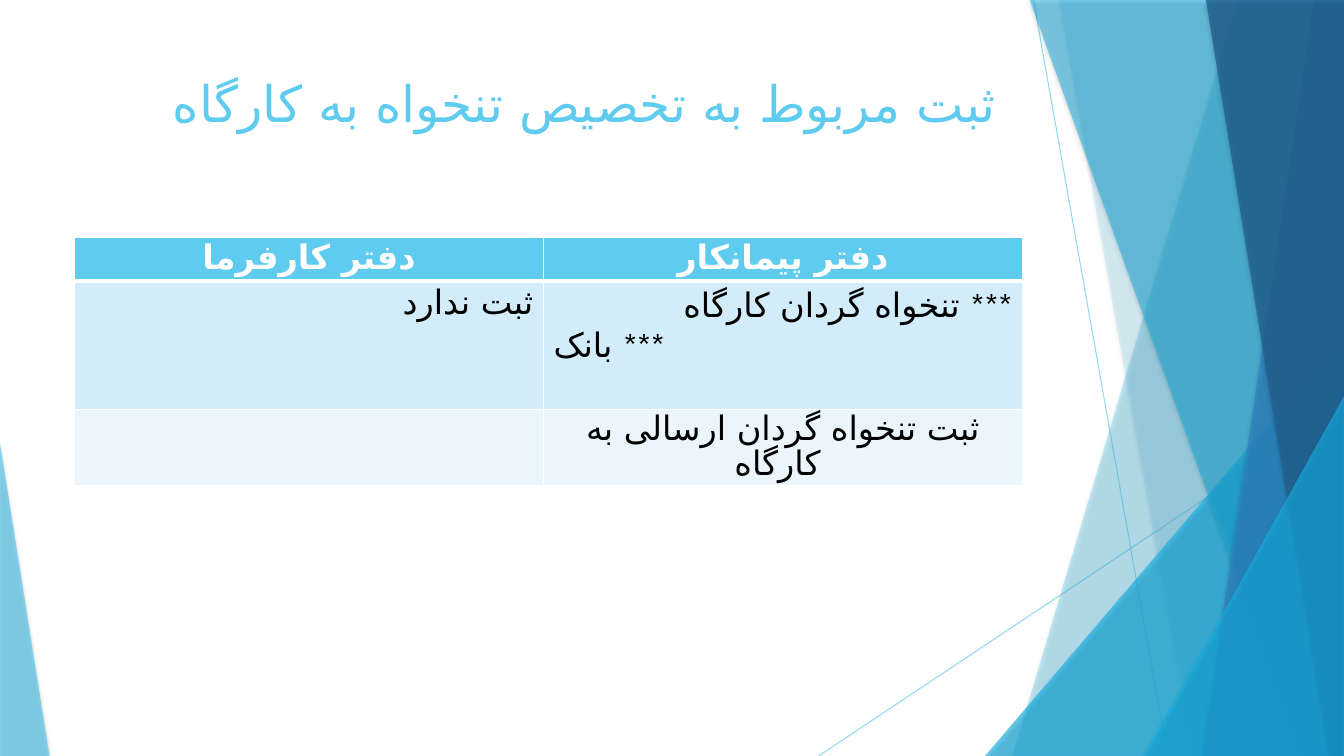
from lxml import etree
from pptx import Presentation
from pptx.dml.color import RGBColor as RGB
from pptx.enum.lang import MSO_LANGUAGE_ID as Lang
from pptx.enum.shapes import MSO_CONNECTOR as Link, MSO_SHAPE as Shape
from pptx.enum.text import MSO_ANCHOR as Anchor, PP_ALIGN as Align
from pptx.oxml.ns import qn
from pptx.util import Inches, Pt

SKY = RGB(0x5F, 0xCB, 0xEF)
CYAN = RGB(0x17, 0xB0, 0xE4)
BLUE = RGB(0x2E, 0x83, 0xC3)
NAVY = RGB(0x22, 0x62, 0x92)
PALE = RGB(0xD2, 0xEC, 0xF9)
MIST = RGB(0xEA, 0xF6, 0xFC)
WHITE = RGB(255, 255, 255)
BLACK = RGB(0, 0, 0)

WIDE, HIGH = 13.33, 7.5
TOP = -0.01
SCRIPT = "DejaVu Sans"


def fade(parent, alpha):
    """Set the opacity, in percent, of the colour inside parent."""
    color = next(parent.iter(qn("a:srgbClr")))
    etree.SubElement(color, qn("a:alpha")).set("val", str(alpha * 1000))


def paint(shape, color, alpha):
    """Give a facet its see-through fill and soft shadow."""
    shape.fill.solid()
    shape.fill.fore_color.rgb = color
    shape.line.fill.background()
    props = shape._element.spPr
    fade(props.find(qn("a:solidFill")), alpha)
    shape.shadow.inherit = False
    cast = etree.SubElement(props.find(qn("a:effectLst")), qn("a:outerShdw"),
                            blurRad=str(Pt(3)), dist=str(Pt(2)),
                            dir="5400000", rotWithShape="0")
    etree.SubElement(cast, qn("a:srgbClr"), val="000000")
    fade(cast, 35)


def add_ray(slide, start, end):
    ray = slide.shapes.add_connector(
        Link.STRAIGHT, *[Inches(n) for n in start + end])
    ray.line.color.rgb = SKY
    ray.line.width = Pt(0.75)
    props = ray._element.spPr
    fade(props, 70)
    etree.SubElement(props, qn("a:effectLst"))


def add_band(slide, top, foot, color, alpha):
    """Fill from a slanted left edge to the right side of the slide."""
    points = [(top, TOP), (WIDE, TOP), (WIDE, HIGH), (foot, HIGH)]
    points = [(Inches(x), Inches(y)) for x, y in points]
    path = slide.shapes.build_freeform(*points[0], scale=1.0)
    path.add_line_segments(points[1:], close=True)
    paint(path.convert_to_shape(), color, alpha)


def add_wedge(slide, left, top, width, peak, color, alpha):
    """Draw a triangle that stands on the foot of the slide."""
    wedge = slide.shapes.add_shape(
        Shape.ISOSCELES_TRIANGLE, Inches(left), Inches(top),
        Inches(width), Inches(HIGH - top))
    wedge.adjustments[0] = peak
    paint(wedge, color, alpha)


def add_facets(slide):
    add_ray(slide, (10.25, 0), (11.58, HIGH))
    add_ray(slide, (WIDE, 4.03), (8.12, HIGH))
    add_band(slide, 12.28, 10.04, SKY, 36)
    add_band(slide, 10.5, 11.83, SKY, 20)
    add_wedge(slide, 9.77, 3.33, 3.56, 1, CYAN, 66)
    add_band(slide, 10.21, 12.91, CYAN, 50)
    add_band(slide, 13.03, 11.92, BLUE, 70)
    add_band(slide, 11.96, 13.18, NAVY, 80)
    add_wedge(slide, 11.34, 3.93, 1.99, 1, CYAN, 66)
    add_wedge(slide, 0, 4.39, 0.49, 0, SKY, 70)


def add_run(para, text, size, color, bold=False, face="Arial"):
    run = para.add_run()
    run.text = text
    font = run.font
    font.name, font.size, font.bold = face, Pt(size), bold
    font.color.rgb = color
    font.language_id = Lang.FARSI
    etree.SubElement(run._r.get_or_add_rPr(), qn("a:cs"), typeface=SCRIPT)


def add_title(slide, left, top, width, height):
    title = slide.shapes.title
    title.left, title.top = Inches(left), Inches(top)
    title.width, title.height = Inches(width), Inches(height)
    frame = title.text_frame
    frame.word_wrap = True
    frame.vertical_anchor = Anchor.TOP
    para = frame.paragraphs[0]
    para.alignment = Align.RIGHT
    add_run(para, "ثبت مربوط به تخصیص تنخواه به کارگاه ", 36, SKY)


def add_edge(cell, side, width):
    """Draw a white border on one side: lnL, lnR, lnT or lnB."""
    edge = etree.Element(qn("a:" + side), w=str(Pt(width)))
    fill = etree.SubElement(edge, qn("a:solidFill"))
    etree.SubElement(fill, qn("a:srgbClr"), val=str(WHITE))
    cell._tc.get_or_add_tcPr().insert(0, edge)


def fill_cell(cell, lines, color, bold, gap):
    """Write lines of (alignment, spacing, texts); stars get their own font."""
    frame = cell.text_frame
    cell.margin_top = cell.margin_bottom = Inches(gap)
    for i, (align, space, texts) in enumerate(lines):
        para = frame.add_paragraph() if i else frame.paragraphs[0]
        para.alignment, para.line_spacing = align, space
        for text in texts:
            face = "Karla" if "*" in text else "Arial"
            add_run(para, text, 24, color, bold, face)


def add_ledger(slide, left, top, cols, rows):
    mid, right = Align.CENTER, Align.RIGHT
    cells = [
        [[(mid, 0.9, ["دفتر کارفرما"])], [(mid, 0.9, ["دفتر پیمانکار"])]],
        [[(right, 0.9, ["ثبت ندارد"])],
         [(right, 1.0, ["تنخواه گردان کارگاه", " ***"]),
          (Align.LEFT, 1.0, ["بانک", " ***"])]],
        [[], [(mid, 0.9, ["ثبت تنخواه گردان ارسالی به کارگاه "])]],
    ]
    looks = [(SKY, WHITE, True, 0.03), (PALE, BLACK, False, 0.05),
             (MIST, BLACK, False, 0.03)]
    table = slide.shapes.add_table(
        len(rows), len(cols), Inches(left), Inches(top),
        Inches(sum(cols)), Inches(sum(rows))).table
    for col, width in zip(table.columns, cols):
        col.width = Inches(width)
    for r, (back, ink, bold, gap) in enumerate(looks):
        table.rows[r].height = Inches(rows[r])
        for c, lines in enumerate(cells[r]):
            cell = table.cell(r, c)
            cell.fill.solid()
            cell.fill.fore_color.rgb = back
            fill_cell(cell, lines, ink, bold, gap)
            add_edge(cell, "lnB", 1 if r else 3)
            add_edge(cell, "lnT", 3 if r == 1 else 1)
            add_edge(cell, "lnR", 1)
            add_edge(cell, "lnL", 1)


def main():
    deck = Presentation()
    deck.slide_width, deck.slide_height = Inches(WIDE), Inches(HIGH)
    slide = deck.slides.add_slide(deck.slide_layouts[5])
    add_facets(slide)
    add_title(slide, 0.74, 0.67, 9.4, 1.1)
    add_ledger(slide, 0.74, 2.36, [4.65, 4.75], [0.43, 1.27, 0.76])
    deck.save("out.pptx")


if __name__ == "__main__":
    main()
